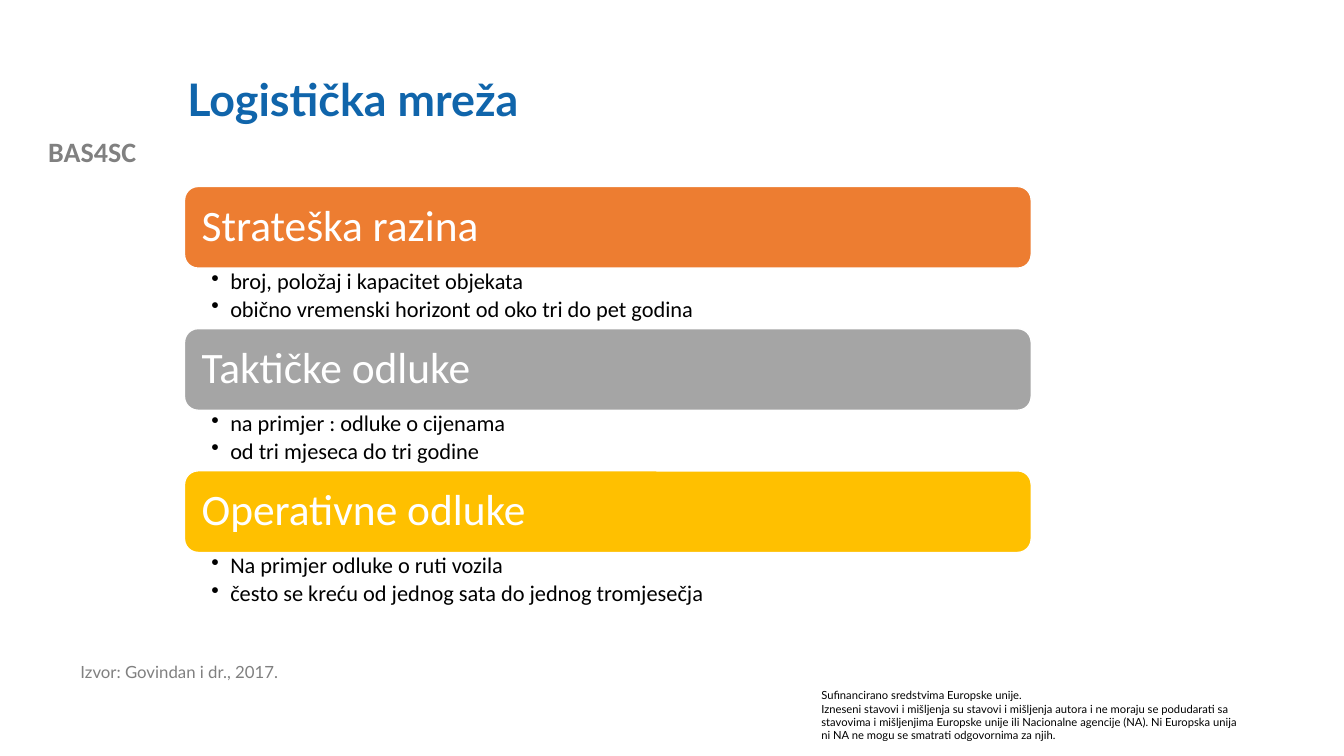
from pptx import Presentation
from pptx.dml.color import RGBColor
from pptx.enum.shapes import MSO_SHAPE
from pptx.enum.text import MSO_ANCHOR, PP_ALIGN
from pptx.util import Pt
from lxml.etree import SubElement
from pptx.oxml.ns import qn

BLUE = RGBColor(0x10, 0x65, 0xAB)
GRAY = RGBColor(0x80, 0x80, 0x80)
BLACK = RGBColor(0, 0, 0)
WHITE = RGBColor(0xFF, 0xFF, 0xFF)
ORANGE = RGBColor(0xED, 0x7D, 0x31)
SILVER = RGBColor(0xA5, 0xA5, 0xA5)
GOLD = RGBColor(0xFF, 0xC0, 0x00)

LEFT, TOP, WIDTH = 131.8, 133.2, 604.8
BAR_H, LIST_H = 58.3, 43.2

LEVELS = [
    ("Strateška razina", ORANGE,
     ["broj, položaj i kapacitet objekata",
      "obično vremenski horizont od oko tri do pet godina"]),
    ("Taktičke odluke", SILVER,
     ["na primjer : odluke o cijenama",
      "od tri mjeseca do tri godine"]),
    ("Operativne odluke", GOLD,
     ["Na primjer odluke o ruti vozila",
      "često se kreću od jednog sata do jednog tromjesečja"]),
]

prs = Presentation()
prs.slide_width, prs.slide_height = Pt(960), Pt(540)
s = prs.slides.add_slide(prs.slide_layouts[6])


def write(tf, lines, size, font, color, bold=False, align=PP_ALIGN.LEFT,
          spacing=1.0, bullet=False):
    tf.word_wrap = True
    for i, line in enumerate(lines):
        p = tf.paragraphs[0] if i == 0 else tf.add_paragraph()
        p.alignment = align
        p.line_spacing = spacing
        if bullet:
            p.space_after = Pt(2.5)
            pPr = p._p.get_or_add_pPr()
            pPr.set("marL", str(Pt(13.5)))
            pPr.set("indent", str(-Pt(13.5)))
            SubElement(pPr, qn("a:buChar"), char="•")
        r = p.add_run()
        r.text = line
        r.font.size = Pt(size)
        r.font.name = font
        r.font.bold = bold
        r.font.color.rgb = color


def add_text(x, y, w, h):
    return s.shapes.add_textbox(Pt(x), Pt(y), Pt(w), Pt(h)).text_frame


write(add_text(0, 92.2, 131.8, 31.7), ["BAS4SC"], 20, "Calibri", GRAY,
      bold=True, align=PP_ALIGN.CENTER)
write(add_text(579.6, 488.2, 314.6, 46),
      ["Sufinancirano sredstvima Europske unije.",
       "Izneseni stavovi i mišljenja su stavovi i mišljenja autora i ne moraju "
       "se podudarati sa stavovima i mišljenjima Europske unije ili Nacionalne "
       "agencije (NA). Ni Europska unija ni NA ne mogu se smatrati odgovornima "
       "za njih."], 8, "Lato", BLACK)

tf = add_text(126.7, 28.8, 767.5, 87.8)
tf.vertical_anchor = MSO_ANCHOR.MIDDLE
write(tf, ["Logistička mreža"], 32, "Lato", BLUE, bold=True, spacing=0.9)

write(add_text(50.4, 469.4, 480.2, 21.6), ["Izvor: Govindan i dr., 2017."],
      12, "Lato", GRAY)

for i, (heading, color, points) in enumerate(LEVELS):
    y = TOP + i * (BAR_H + LIST_H + 0.05)
    sp = s.shapes.add_shape(MSO_SHAPE.ROUNDED_RECTANGLE,
                            Pt(LEFT), Pt(y), Pt(WIDTH), Pt(BAR_H))
    sp.shadow.inherit = False
    sp.fill.solid()
    sp.fill.fore_color.rgb = color
    sp.line.color.rgb = WHITE
    sp.line.width = Pt(1)
    tf = sp.text_frame
    tf.vertical_anchor = MSO_ANCHOR.MIDDLE
    tf.margin_left = tf.margin_right = Pt(9.4)
    write(tf, [heading], 31, "Calibri", WHITE, spacing=0.9)

    tf = add_text(LEFT, y + BAR_H, WIDTH, LIST_H)
    tf.margin_left, tf.margin_right = Pt(19.2), Pt(8.6)
    tf.margin_top = tf.margin_bottom = Pt(1.4)
    write(tf, points, 16, "Calibri", BLACK, spacing=0.9, bullet=True)

prs.save("out.pptx")
